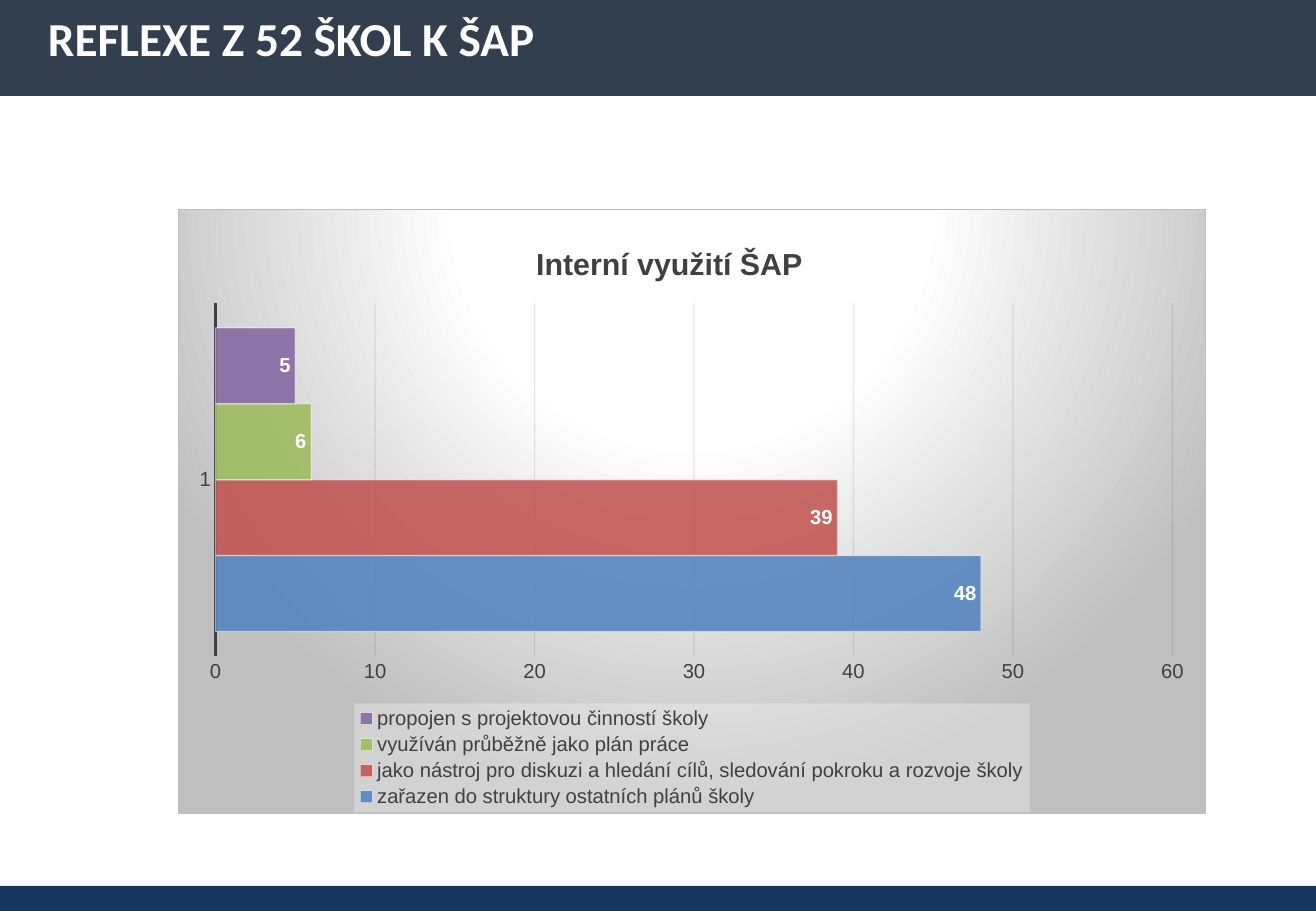
import pptx
import pptx.chart.data
import pptx.dml.color
import pptx.enum.chart
import pptx.enum.shapes
import pptx.enum.text
import pptx.oxml
import pptx.oxml.ns
import pptx.util

PX = 914400 / 121.5
PAGE_W, PAGE_H = 1316, 911
CHART_X, CHART_Y, CHART_W, CHART_H = 178, 209, 1028, 605
GREY = "404040"
NS = pptx.oxml.ns.nsdecls("a", "c")
qn = pptx.oxml.ns.qn


def px(length):
    return pptx.util.Emu(round(length * PX))


def rgb(value):
    return pptx.dml.color.RGBColor.from_string(value)


deck = pptx.Presentation()
deck.slide_width, deck.slide_height = px(PAGE_W), px(PAGE_H)
page = deck.slides.add_slide(deck.slide_layouts[5])

# Footer band
band = page.shapes.add_shape(
    pptx.enum.shapes.MSO_SHAPE.RECTANGLE, 0, px(886), px(PAGE_W), px(25))
band.shadow.inherit = False
band.fill.solid()
band.fill.fore_color.rgb = rgb("17375E")
band.line.fill.background()

# Title band
title = page.shapes.title
title.left, title.top, title.width, title.height = 0, 0, px(PAGE_W), px(96)
title.fill.solid()
title.fill.fore_color.rgb = rgb("333F4F")
frame = title.text_frame
frame.word_wrap = True
frame.auto_size = pptx.enum.text.MSO_AUTO_SIZE.NONE
frame.vertical_anchor = pptx.enum.text.MSO_ANCHOR.MIDDLE
frame.margin_left = frame.margin_right = px(48)
frame.margin_top, frame.margin_bottom = 0, px(14)
para = frame.paragraphs[0]
para.alignment = pptx.enum.text.PP_ALIGN.LEFT
para.line_spacing = 0.9
span = para.add_run()
span.text = "REFLEXE Z 52 ŠKOL K ŠAP"
span.font.name = "Calibri"
span.font.size = pptx.util.Pt(28)
span.font.bold = True
span.font.color.rgb = rgb("FFFFFF")

# Bar chart
uses = [
    ("zařazen do struktury ostatních plánů školy", 48, "4F81BD"),
    ("jako nástroj pro diskuzi a hledání cílů, sledování pokroku a rozvoje školy", 39, "C0504D"),
    ("využíván průběžně jako plán práce", 6, "9BBB59"),
    ("propojen s projektovou činností školy", 5, "8064A2"),
]
data = pptx.chart.data.CategoryChartData()
data.categories = ["1"]
for name, count, color in uses:
    data.add_series(name, [count])
chart = page.shapes.add_chart(
    pptx.enum.chart.XL_CHART_TYPE.BAR_CLUSTERED,
    px(CHART_X), px(CHART_Y), px(CHART_W), px(CHART_H), data).chart
chart.font.name = "Arial"
chart.font.size = pptx.util.Pt(10)

# Chart title
chart.has_title = True
heading = chart.chart_title.text_frame.paragraphs[0].add_run()
heading.text = "Interní využití ŠAP"
heading.font.name = "Arial"
heading.font.size = pptx.util.Pt(18)
heading.font.bold = True
heading.font.color.rgb = rgb(GREY)

# Legend
chart.has_legend = True
chart.legend.position = pptx.enum.chart.XL_LEGEND_POSITION.BOTTOM
chart.legend.include_in_layout = False

# Axes
categories, values = chart.category_axis, chart.value_axis
for axis in (categories, values):
    axis.major_tick_mark = pptx.enum.chart.XL_TICK_MARK.NONE
    axis.minor_tick_mark = pptx.enum.chart.XL_TICK_MARK.NONE
for font in (categories.tick_labels.font, values.tick_labels.font, chart.legend.font):
    font.name = "Arial"
    font.size = pptx.util.Pt(12)
    font.color.rgb = rgb(GREY)
categories.has_major_gridlines = False
categories.format.line.color.rgb = rgb(GREY)
categories.format.line.width = pptx.util.Pt(1.5)
values.minimum_scale, values.maximum_scale, values.major_unit = 0, 60, 10
values.format.line.fill.background()
values.has_major_gridlines = True
grid = values.major_gridlines.format.line
grid.color.rgb = rgb("0D0D0D")
grid.width = pptx.util.Pt(0.75)

# Bars and value labels
plot = chart.plots[0]
plot.vary_by_categories = False
plot.gap_width = 65
plot.overlap = 0
for series, (name, count, color) in zip(plot.series, uses):
    series.format.fill.solid()
    series.format.fill.fore_color.rgb = rgb(color)
    series.format.line.color.rgb = rgb("FFFFFF")
    series.format.line.width = pptx.util.Pt(0.75)
    labels = series.data_labels
    labels.show_value = True
    labels.position = pptx.enum.chart.XL_LABEL_POSITION.INSIDE_END
    labels.font.name = "Arial"
    labels.font.size = pptx.util.Pt(12)
    labels.font.bold = True
    labels.font.color.rgb = rgb("FFFFFF")

# Transparency of bars, bar outlines and gridlines
root = chart.element
for route, percent in (("c:ser/c:spPr/a:solidFill", 85),
                       ("c:ser/c:spPr/a:ln/a:solidFill", 50),
                       ("c:majorGridlines/c:spPr/a:ln/a:solidFill", 10)):
    for color in root.xpath(f".//{route}/a:srgbClr"):
        color.append(pptx.oxml.parse_xml(f'<a:alpha {NS} val="{percent * 1000}"/>'))

# Gradient background and legend panel
root.find(qn("c:chart")).addnext(pptx.oxml.parse_xml(
    f'<c:spPr {NS}><a:gradFill><a:gsLst>'
    '<a:gs pos="0"><a:srgbClr val="FFFFFF"/></a:gs>'
    '<a:gs pos="39000"><a:srgbClr val="FFFFFF"/></a:gs>'
    '<a:gs pos="100000"><a:srgbClr val="BFBFBF"/></a:gs></a:gsLst>'
    '<a:path path="circle"><a:fillToRect l="50000" t="-80000" r="50000" b="180000"/></a:path>'
    '</a:gradFill><a:ln w="9525"><a:solidFill><a:srgbClr val="BFBFBF"/></a:solidFill></a:ln></c:spPr>'))
root.xpath(".//c:legend/c:overlay")[0].addnext(pptx.oxml.parse_xml(
    f'<c:spPr {NS}><a:solidFill><a:srgbClr val="F2F2F2"><a:alpha val="39000"/></a:srgbClr>'
    '</a:solidFill></c:spPr>'))

# Places of the chart parts: tag, layout index, left, top, width, height
for tag, index, left, top, width, height in (
        ("c:title", 1, 531, 238, 322, 44),
        ("c:plotArea", 0, 215, 303, 958, 354),
        ("c:legend", 1, 354, 704, 676, 109)):
    part = root.xpath(f"./c:chart//{tag}")[0]
    for old in part.findall(qn("c:layout")):
        part.remove(old)
    target = '<c:layoutTarget val="inner"/>' if tag == "c:plotArea" else ""
    part.insert(index, pptx.oxml.parse_xml(
        f'<c:layout {NS}><c:manualLayout>{target}'
        '<c:xMode val="edge"/><c:yMode val="edge"/>'
        f'<c:x val="{(left - CHART_X) / CHART_W:.3f}"/><c:y val="{(top - CHART_Y) / CHART_H:.3f}"/>'
        f'<c:w val="{width / CHART_W:.3f}"/><c:h val="{height / CHART_H:.3f}"/>'
        '</c:manualLayout></c:layout>'))

deck.save("out.pptx")
